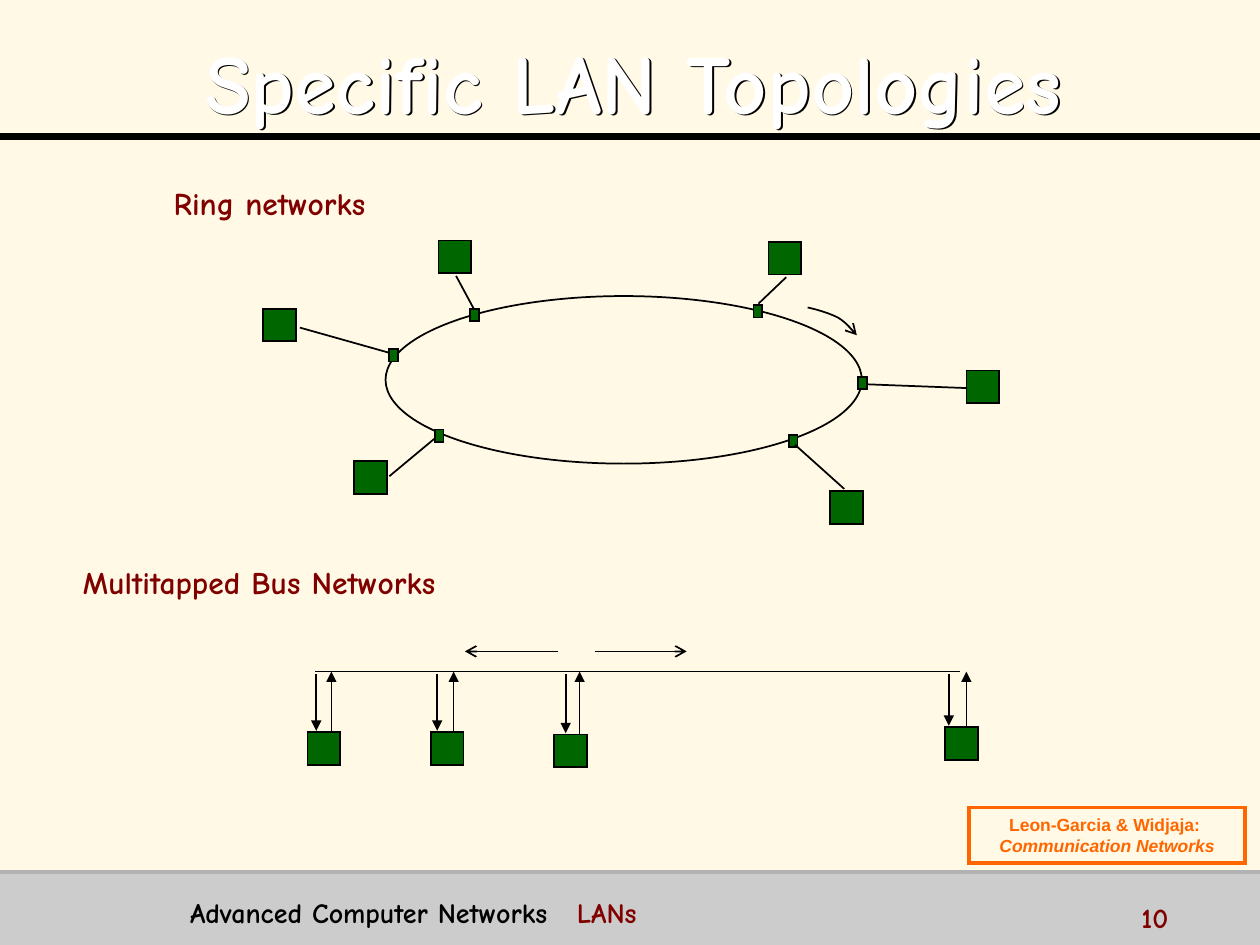
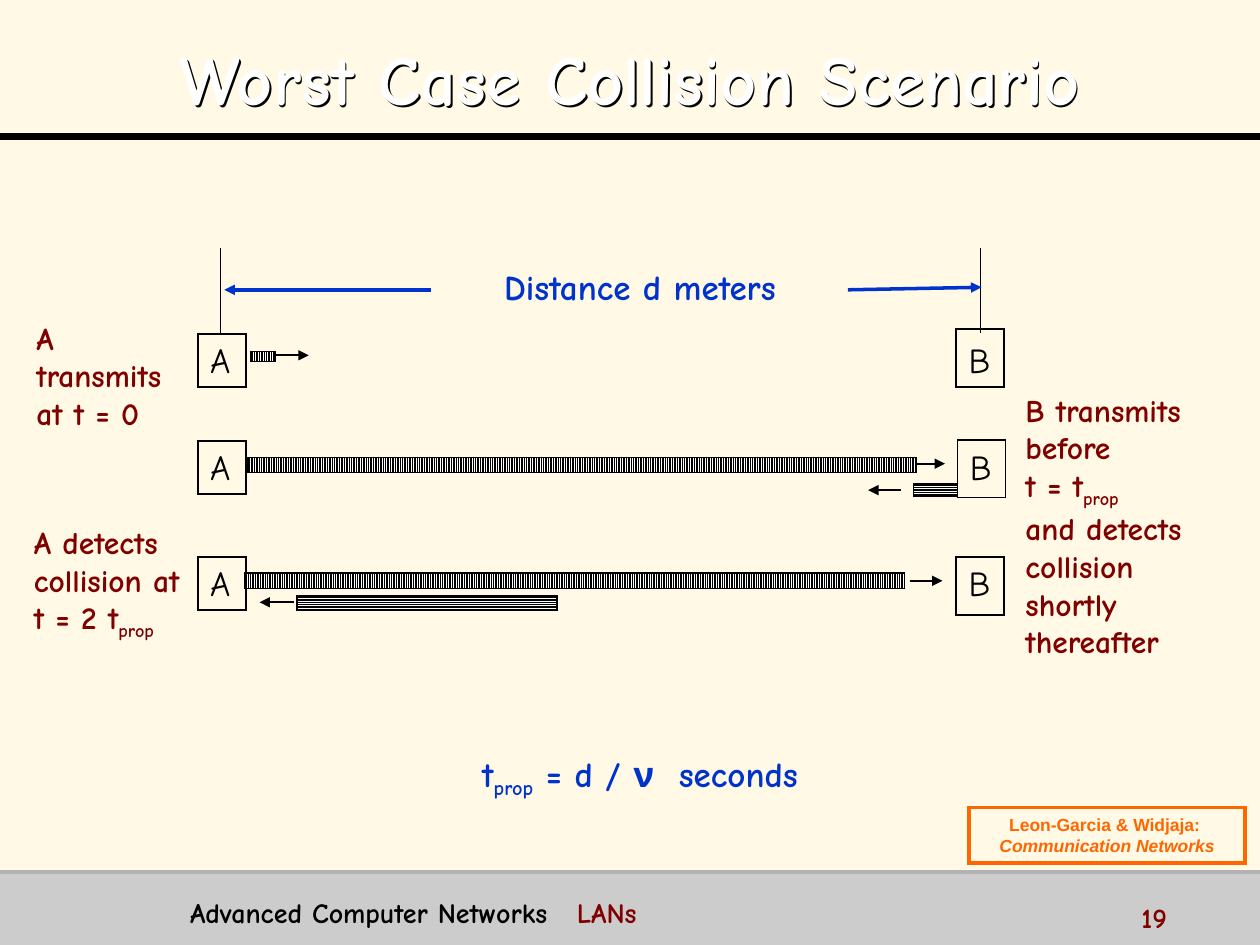
import pptx
import pptx.util
from lxml import etree
from pptx.dml.color import RGBColor
from pptx.enum.dml import MSO_PATTERN
from pptx.enum.shapes import MSO_CONNECTOR, MSO_SHAPE
from pptx.enum.text import MSO_ANCHOR, PP_ALIGN
from pptx.oxml.ns import qn
from pptx.util import Inches

CREAM = RGBColor(0xFF, 0xF9, 0xE6)
WHITE = RGBColor(0xFF, 0xFF, 0xFF)
BLACK = RGBColor(0, 0, 0)
BAND_GRAY = RGBColor(0xCC, 0xCC, 0xCC)
EDGE_GRAY = RGBColor(0xB2, 0xB2, 0xB2)
MAROON = RGBColor(0x80, 0, 0)
GREEN = RGBColor(0, 0x66, 0)
BLUE = RGBColor(0, 0x33, 0xCC)
ORANGE = RGBColor(0xFF, 0x66, 0)

COMIC = "Comic Neue"
HEADING = dict(name=COMIC, size=18, bold=True, color=MAROON)
FORMULA = dict(name=COMIC, size=20, bold=True, color=BLUE)
NODE = dict(name=COMIC, size=20, color=BLACK)
FOOTER = dict(name=COMIC, size=16, bold=True, color=BLACK)
NUMBER = dict(FOOTER, color=MAROON)
CREDIT = dict(name="Arial", size=10, bold=True, color=ORANGE)
TITLE = dict(name=COMIC, bold=True, color=WHITE)
SUBSCRIPT = dict(baseline="-25000")
STATION = 0.26


def add_run(p, text, fmt):
    """Add a run; baseline and spc are raw run attributes, the rest font values."""
    r = p.add_run()
    r.text = text
    for key, value in fmt.items():
        if key in ("baseline", "spc"):
            r._r.get_or_add_rPr().set(key, value)
        elif key == "color":
            r.font.color.rgb = value
        elif key == "size":
            r.font.size = pptx.util.Pt(value)
        else:
            setattr(r.font, key, value)


def fill_text(tf, paragraphs, fmt, align=None):
    """Each paragraph is a string or a list of (text, extra format) runs."""
    for i, runs in enumerate(paragraphs):
        p = tf.paragraphs[0] if i == 0 else tf.add_paragraph()
        p.alignment = align
        for text, extra in [(runs, {})] if isinstance(runs, str) else runs:
            add_run(p, text, {**fmt, **extra})


def add_text(s, box, paragraphs, fmt, align=None, wrap=True):
    tf = s.shapes.add_textbox(*map(Inches, box)).text_frame
    tf.word_wrap = wrap
    fill_text(tf, paragraphs, fmt, align)


def add_box(s, box, fill=None, line=BLACK, width=1, kind=MSO_SHAPE.RECTANGLE):
    """Add an outlined shape; fill is a colour, a pattern or None."""
    sp = s.shapes.add_shape(kind, *map(Inches, box))
    sp.shadow.inherit = False
    if fill is None:
        sp.fill.background()
    elif isinstance(fill, RGBColor):
        sp.fill.solid()
        sp.fill.fore_color.rgb = fill
    else:
        sp.fill.patterned()
        sp.fill.pattern = fill
        sp.fill.fore_color.rgb = WHITE
        sp.fill.back_color.rgb = BLACK
    if line is None:
        sp.line.fill.background()
    else:
        style_line(sp, line, width)
        etree.SubElement(sp.element.spPr.find(qn("a:ln")), qn("a:miter"), lim="800000")
    return sp


def style_line(sp, color, width, tip=None):
    sp.line.color.rgb = color
    sp.line.width = pptx.util.Pt(width)
    if tip:
        ln = sp.element.spPr.find(qn("a:ln"))
        etree.SubElement(ln, qn("a:tailEnd"), type=tip)


def add_line(s, x1, y1, x2, y2, color=BLACK, width=1, tip=None):
    c = s.shapes.add_connector(MSO_CONNECTOR.STRAIGHT,
                               *map(Inches, (x1, y1, x2, y2)))
    style_line(c, color, width, tip)
    etree.SubElement(c.element.spPr, qn("a:effectLst"))
    return c


def bezier(points, steps=8):
    """Sample a cubic curve, leaving out its start."""
    for i in range(1, steps + 1):
        t = i / steps
        weights = ((1 - t) ** 3, 3 * t * (1 - t) ** 2, 3 * t * t * (1 - t), t ** 3)
        yield tuple(sum(w * pt[k] for w, pt in zip(weights, points)) for k in (0, 1))


def add_curved_arrow(s, x, y, start, curves):
    points = [start]
    for controls in curves:
        points += bezier([points[-1], *controls])
    points = [(Inches(x + dx), Inches(y + dy)) for dx, dy in points]
    fb = s.shapes.build_freeform(*points[0])
    fb.add_line_segments(points[1:], close=False)
    sp = fb.convert_to_shape()
    sp.shadow.inherit = False
    sp.fill.background()
    style_line(sp, BLACK, 1, "arrow")


def build_layout(prs, layout):
    """Put the background, title rule and footer band on the shared layout."""
    fill = prs.slide_master.background.fill
    fill.solid()
    fill.fore_color.rgb = CREAM
    s = prs.slides[0]
    for sp in (add_box(s, (0, 6.92, 10, 0.58), BAND_GRAY, line=None),
               add_line(s, 0, 1.08, 10, 1.08, width=4),
               add_line(s, 0, 6.92, 10, 6.92, EDGE_GRAY, 2)):
        layout.shapes.element.append(sp.element)


def add_title(s, box, text, size):
    """Fill the title; its unfilled shape casts the shadow of the letters."""
    sp = s.shapes.title
    for key, value in zip(("left", "top", "width", "height"), box):
        setattr(sp, key, Inches(value))
    sp.fill.background()
    sp.line.fill.background()
    effects = etree.SubElement(sp.element.spPr, qn("a:effectLst"))
    shadow = etree.SubElement(effects, qn("a:outerShdw"), blurRad="0",
                              dist=str(Inches(0.02)), dir="2700000",
                              algn="ctr", rotWithShape="0")
    etree.SubElement(shadow, qn("a:srgbClr"), val=str(BLACK))
    tf = sp.text_frame
    tf.vertical_anchor = MSO_ANCHOR.MIDDLE
    fill_text(tf, [text], dict(TITLE, size=size), PP_ALIGN.CENTER)
    tf.paragraphs[0].line_spacing = 1.1


def add_footer(s, number):
    tf = add_box(s, (7.69, 6.41, 2.19, 0.44), line=ORANGE, width=2).text_frame
    tf.word_wrap = True
    tf.vertical_anchor = MSO_ANCHOR.MIDDLE
    fill_text(tf, ["Leon-Garcia & Widjaja: ",
                   [("Communication Networks", dict(italic=True))]],
              CREDIT, PP_ALIGN.CENTER)
    tf = s.shapes.add_textbox(*map(Inches, (1.41, 7.06, 7.28, 0.31))).text_frame
    tf.word_wrap = True
    p = tf.paragraphs[0]
    tabs = etree.SubElement(p._p.get_or_add_pPr(), qn("a:tabLst"))
    etree.SubElement(tabs, qn("a:tab"), pos=str(Inches(3.07)), algn="l")
    add_run(p, "Advanced Computer Networks\t", FOOTER)
    add_run(p, "LANs", NUMBER)
    add_text(s, (8.96, 7.1, 1, 0.25), [str(number)], NUMBER)


def add_station(s, x, y):
    add_box(s, (x, y, STATION, STATION), GREEN)


def ring_network(s, x, y, w, h):
    add_text(s, (x - 1.78, y - 0.94, 2.05, 0.4), ["Ring networks"], HEADING)
    add_box(s, (x, y, w, h), kind=MSO_SHAPE.OVAL)
    # station corner, tap corner, link start, link end
    nodes = [
        ((-0.97, 0.10), (0.03, 0.42), (-0.68, 0.25), (0.03, 0.45)),
        ((0.42, -0.44), (0.67, 0.10), (0.56, -0.16), (0.70, 0.10)),
        ((3.04, -0.43), (2.92, 0.07), (3.18, -0.15), (2.96, 0.06)),
        ((4.61, 0.59), (3.75, 0.64), (4.61, 0.73), (3.82, 0.70)),
        ((3.53, 1.55), (3.20, 1.10), (3.64, 1.53), (3.25, 1.18)),
        ((-0.25, 1.31), (0.39, 1.06), (0.03, 1.43), (0.39, 1.13)),
    ]
    for station, tap, start, end in nodes:
        add_station(s, x + station[0], y + station[1])
        add_box(s, (x + tap[0], y + tap[1], 0.07, 0.1), GREEN)
        add_line(s, x + start[0], y + start[1], x + end[0], y + end[1])
    add_curved_arrow(s, x, y, (3.35, 0.09),
                     [[(3.44, 0.11), (3.53, 0.14), (3.59, 0.17)],
                      [(3.66, 0.21), (3.72, 0.29), (3.74, 0.31)]])


def bus_network(s, x, y, w):
    add_text(s, (x - 1.94, y - 0.91, 3.61, 0.4), ["Multitapped Bus Networks"], HEADING)
    add_line(s, x, y, x + w, y)
    # station left and top, receive line x, send line x
    for left, top, receive, send in [(-0.06, 0.48, 0.01, 0.13),
                                     (0.92, 0.48, 0.97, 1.10),
                                     (1.90, 0.50, 1.99, 2.10),
                                     (5.00, 0.44, 5.03, 5.17)]:
        add_station(s, x + left, y + top)
        add_line(s, x + receive, y + 0.02, x + receive, y + top - 0.01, tip="triangle")
        add_line(s, x + send, y + top, x + send, y, tip="triangle")
    for start, end in [(1.93, 1.19), (2.22, 2.95)]:
        add_line(s, x + start, y - 0.16, x + end, y - 0.16, tip="arrow")


def distance_scale(s, x, y):
    for dx in (0.18, 6.21):
        add_line(s, x + dx, y, x + dx, y + 0.67, width=0.75)
    add_text(s, (x + 1.86, y + 0.09, 3.3, 0.43), ["Distance d meters"],
             FORMULA, PP_ALIGN.CENTER)
    for start, end, dy in [(1.85, 0.21, 0.33), (5.16, 6.22, 0.31)]:
        add_line(s, x + start, y + 0.33, x + end, y + dy, BLUE, 2, "triangle")


def collision_timeline(s, x, y):
    for bx, a_top, b_top, label_top in [(6.02, 0.68, 0.64, 0.67),
                                        (6.03, 1.53, 1.52, 1.52),
                                        (6.02, 2.45, 2.45, 2.44)]:
        for name, dx, top, height in [("A", 0, a_top, 0.42), ("B", bx, b_top, 0.46)]:
            add_box(s, (x + dx, y + top, 0.38, height))
            add_text(s, (x + dx, y + label_top, 0.4, 0.43), [name],
                     NODE, wrap=False)
    from_a, from_b = MSO_PATTERN.LIGHT_VERTICAL, MSO_PATTERN.LIGHT_HORIZONTAL
    # frame pattern and box, then its arrow's start, end and height
    for pattern, dx, dy, w, h, start, end, level in [
            (from_a, 0.42, 0.82, 0.19, 0.08, 0.61, 0.88, 0.85),
            (from_a, 0.40, 1.66, 5.30, 0.12, 5.66, 5.93, 1.71),
            (from_b, 5.68, 1.87, 0.35, 0.10, 5.58, 5.32, 1.92),
            (from_a, 0.37, 2.58, 5.24, 0.12, 5.65, 5.91, 2.64),
            (from_b, 0.79, 2.76, 2.06, 0.11, 0.76, 0.49, 2.81)]:
        add_line(s, x + start, y + level, x + end, y + level, tip="triangle")
        add_box(s, (x + dx, y + dy, w, h), pattern)


def collision_notes(s, x, y):
    prop = ("prop", SUBSCRIPT)
    add_text(s, (x + 0.02, y, 1.4, 1.01), ["A transmits at t = 0"], HEADING)
    add_text(s, (x, y + 1.62, 1.45, 1.61),
             ["A detects", "collision at", [("t = 2 t", {}), prop]], HEADING)
    add_text(s, (x + 7.87, y + 0.57, 1.82, 2.22),
             ["B transmits before", [("t = t", {}), prop], "and detects",
              "collision shortly", "thereafter"], HEADING)
    add_text(s, (x + 3.26, y + 3.44, 3.3, 0.43),
             [[("t", {}), prop, (" = d / ν", {}),
               (" ", dict(spc="700")), ("seconds", {})]],
             FORMULA, PP_ALIGN.CENTER)


def topologies_slide(s):
    add_title(s, (0.16, 0.05, 9.73, 1.1), "Specific LAN Topologies", 48)
    ring_network(s, 3.06, 2.35, 3.78, 1.33)
    bus_network(s, 2.5, 5.33, 5.12)
    add_footer(s, 10)


def collision_slide(s):
    add_title(s, (0.75, 0.05, 8.5, 1.07), "Worst Case Collision Scenario", 40)
    distance_scale(s, 1.57, 1.97)
    collision_timeline(s, 1.57, 1.97)
    collision_notes(s, 0.17, 2.48)
    add_footer(s, 19)


def main():
    prs = pptx.Presentation()
    prs.slide_width, prs.slide_height = Inches(10), Inches(7.5)
    layout = prs.slide_layouts[5]
    slides = [prs.slides.add_slide(layout) for _ in range(2)]
    build_layout(prs, layout)
    topologies_slide(slides[0])
    collision_slide(slides[1])
    prs.save("out.pptx")


if __name__ == "__main__":
    main()
